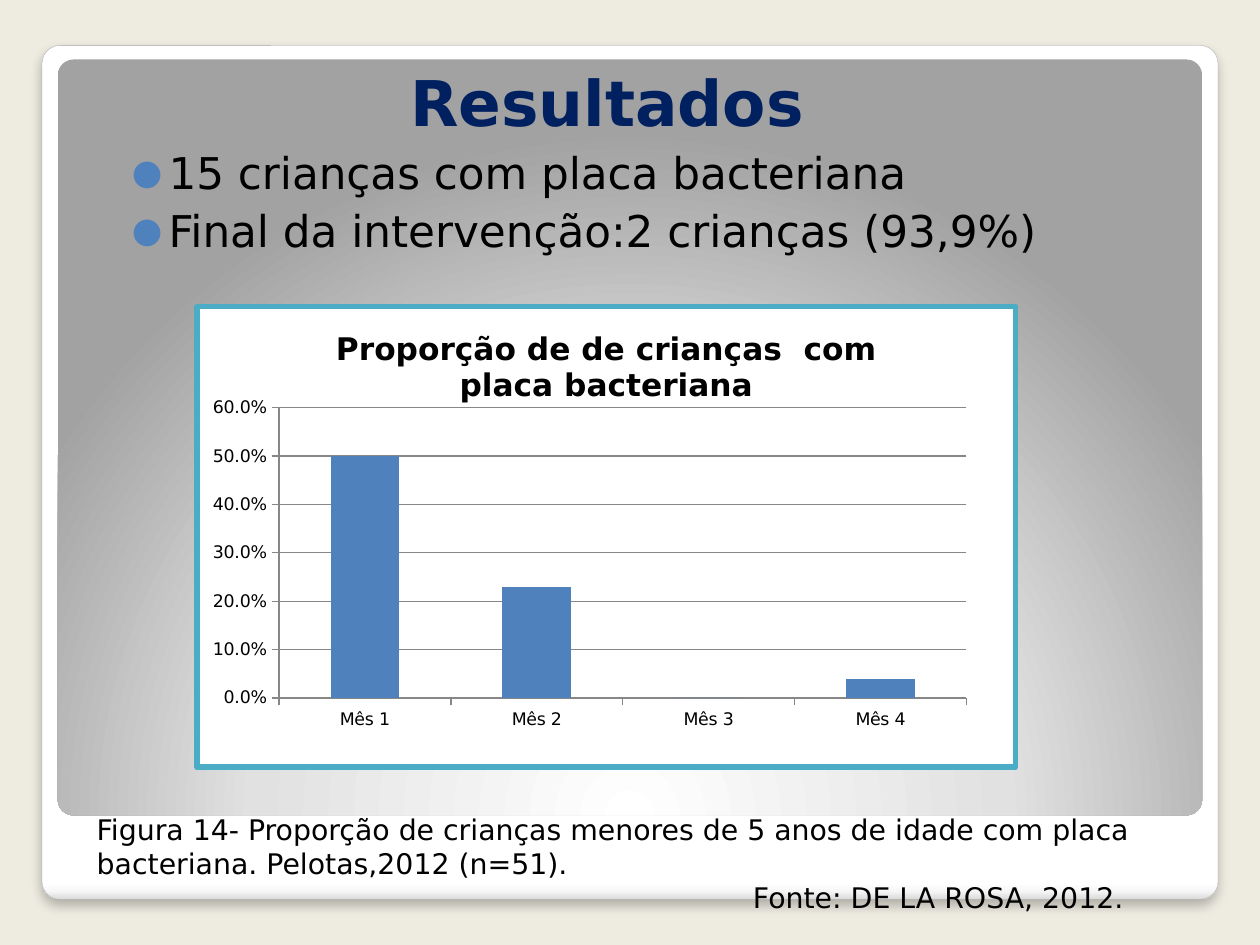
import pptx
import pptx.chart.data
import pptx.dml.color
import pptx.enum.chart
import pptx.enum.shapes
import pptx.enum.text
import pptx.oxml
import pptx.oxml.ns
import pptx.util

Pt = pptx.util.Pt
RGBColor = pptx.dml.color.RGBColor
ANCHOR = pptx.enum.text.MSO_ANCHOR

FONT = "DejaVu Sans"
BACKGROUND = RGBColor(0xEE, 0xEC, 0xE1)
FRAME_LINE = RGBColor(0xA4, 0xA4, 0xA4)
NAVY = RGBColor(0x00, 0x20, 0x60)
BLUE = RGBColor(0x4F, 0x81, 0xBD)
TEAL = RGBColor(0x4B, 0xAC, 0xC6)
GRAY = RGBColor(0x87, 0x87, 0x87)
BLACK = RGBColor(0, 0, 0)
WHITE = RGBColor(0xFF, 0xFF, 0xFF)

TITLE = "Resultados"
BULLETS = ["15 crianças com placa bacteriana",
           "Final da intervenção:2 crianças (93,9%)"]
CAPTION = ["Figura 14- Proporção de crianças menores de 5 anos de idade "
           "com placa bacteriana. Pelotas,2012 (n=51).",
           "Fonte: DE LA ROSA, 2012."]
CHART_TITLE = "Proporção de de crianças  com placa bacteriana"
MONTHS = ["Mês 1", "Mês 2", "Mês 3", "Mês 4"]
SHARES = [0.5, 0.23, 0, 0.04]
PLOT_LAYOUT = {"x": 0.1, "y": 0.22, "w": 0.84, "h": 0.63}

FRAME_STOPS = [(0, "FFFFFF"), (98, "FFFFFF"), (99, "F7F7F7"), (100, "DADADA")]
PANEL_STOPS = [(0, "FFFFFF"), (55, "E1E1E1"), (100, "A2A2A2")]
LINEAR_DOWN = '<a:lin ang="5400000" scaled="0"/>'
RADIAL_FROM_BELOW = ('<a:path path="circle"><a:fillToRect l="50000" t="175000" '
                     'r="50000" b="-75000"/></a:path>')
SOFT_SHADOW = ('<a:outerShdw blurRad="76200" dist="50800" dir="5400000" '
               'algn="tl" rotWithShape="0"><a:srgbClr val="000000">'
               '<a:alpha val="25000"/></a:srgbClr></a:outerShdw>')


def element(tag, content="", attributes=""):
    """Parse one namespaced XML element."""
    namespaces = pptx.oxml.ns.nsdecls("a", "c")
    return pptx.oxml.parse_xml(
        f"<{tag} {namespaces} {attributes}>{content}</{tag}>")


def add_panel(slide, box, stops, direction):
    """Add a rounded rectangle with a gradient fill."""
    shape = slide.shapes.add_shape(
        pptx.enum.shapes.MSO_SHAPE.ROUNDED_RECTANGLE, *map(Pt, box))
    shape.adjustments[0] = 0.021
    shape.shadow.inherit = False
    shape.line.fill.background()
    marks = "".join(f'<a:gs pos="{position * 1000}"><a:srgbClr val="{color}"/></a:gs>'
                    for position, color in stops)
    gradient = element("a:gradFill", f"<a:gsLst>{marks}</a:gsLst>{direction}",
                       'rotWithShape="1"')
    shape._element.spPr.find(pptx.oxml.ns.qn("a:prstGeom")).addnext(gradient)
    return shape


def add_text(slide, box, lines, size, color, anchor):
    """Add a wrapping text box and return its paragraphs."""
    frame = slide.shapes.add_textbox(*map(Pt, box)).text_frame
    frame.word_wrap = True
    frame.vertical_anchor = anchor
    frame.text = "\n".join(lines)
    for paragraph in frame.paragraphs:
        paragraph.font.name = FONT
        paragraph.font.size = Pt(size)
        paragraph.font.color.rgb = color
    return frame.paragraphs


def add_bullet(paragraph):
    """Give a paragraph a round blue bullet and a hanging indent."""
    paragraph.space_before = Pt(3)
    properties = paragraph._p.get_or_add_pPr()
    properties.set("marL", str(Pt(21)))
    properties.set("indent", str(-Pt(21)))
    properties.append(element("a:buClr", f'<a:srgbClr val="{BLUE}"/>'))
    properties.append(element("a:buSzPct", attributes='val="80000"'))
    properties.append(element("a:buFont", attributes=f'typeface="{FONT}"'))
    properties.append(element("a:buChar", attributes='char="●"'))


def add_share_chart(slide, box):
    """Add the column chart of monthly shares."""
    data = pptx.chart.data.CategoryChartData(number_format="0.0%")
    data.categories = MONTHS
    data.add_series("Series 1", SHARES)
    chart = slide.shapes.add_chart(
        pptx.enum.chart.XL_CHART_TYPE.COLUMN_CLUSTERED, *map(Pt, box), data).chart
    chart.has_legend = False
    chart.font.name = FONT
    chart.font.size = Pt(10)
    chart.font.color.rgb = BLACK

    chart.chart_title.text_frame.text = CHART_TITLE
    chart.chart_title.include_in_layout = False
    title_font = chart.chart_title.text_frame.paragraphs[0].font
    title_font.name = FONT
    title_font.size = Pt(18)
    title_font.bold = True
    title_font.color.rgb = BLACK

    plot = chart.plots[0]
    plot.vary_by_categories = False
    plot.gap_width = 150
    plot.series[0].format.fill.solid()
    plot.series[0].format.fill.fore_color.rgb = BLUE

    value_axis = chart.value_axis
    value_axis.minimum_scale, value_axis.maximum_scale = 0, 0.6
    value_axis.major_unit = 0.1
    value_axis.tick_labels.number_format = "0.0%"
    value_axis.tick_labels.number_format_is_linked = False
    value_axis.has_major_gridlines = True
    for axis in (value_axis, chart.category_axis):
        axis.major_tick_mark = pptx.enum.chart.XL_TICK_MARK.OUTSIDE
    for line in (value_axis.format.line, chart.category_axis.format.line,
                 value_axis.major_gridlines.format.line):
        line.color.rgb = GRAY
        line.width = Pt(0.75)

    qn = pptx.oxml.ns.qn
    space = chart._chartSpace
    plot_area = space.find(qn("c:chart")).find(qn("c:plotArea"))
    for layout in plot_area.findall(qn("c:layout")):
        plot_area.remove(layout)
    modes = '<c:layoutTarget val="inner"/><c:xMode val="edge"/><c:yMode val="edge"/>'
    sizes = "".join(f'<c:{key} val="{value}"/>' for key, value in PLOT_LAYOUT.items())
    plot_area.insert(0, element(
        "c:layout", f"<c:manualLayout>{modes}{sizes}</c:manualLayout>"))
    space.find(qn("c:chart")).addnext(element(
        "c:spPr",
        f'<a:solidFill><a:srgbClr val="{WHITE}"/></a:solidFill>'
        f'<a:ln w="{Pt(3.35)}"><a:solidFill><a:srgbClr val="{TEAL}"/></a:solidFill>'
        '<a:round/></a:ln>'))


presentation = pptx.Presentation()
presentation.slide_width, presentation.slide_height = Pt(720), Pt(540)
slide = presentation.slides.add_slide(presentation.slide_layouts[6])
slide.background.fill.solid()
slide.background.fill.fore_color.rgb = BACKGROUND

frame = add_panel(slide, (24, 26, 672, 488), FRAME_STOPS, LINEAR_DOWN)
frame.line.color.rgb = FRAME_LINE
frame.line.width = Pt(0.16)
frame._element.spPr.find(pptx.oxml.ns.qn("a:effectLst")).append(
    pptx.oxml.parse_xml(SOFT_SHADOW.replace(
        "<a:outerShdw", f"<a:outerShdw {pptx.oxml.ns.nsdecls('a')}", 1)))
add_panel(slide, (33, 34, 654, 432), PANEL_STOPS, RADIAL_FROM_BELOW)

caption = add_text(slide, (48.2, 474, 644.4, 52), CAPTION, 16.2, BLACK, ANCHOR.BOTTOM)
caption[1]._p.get_or_add_pPr().set("marL", str(Pt(375)))

for bullet in add_text(slide, (68.2, 80, 577, 100), BULLETS, 25, BLACK, ANCHOR.TOP):
    add_bullet(bullet)

add_share_chart(slide, (111, 173.5, 471, 266.5))

heading = add_text(slide, (24.7, 0, 644.4, 82.8), [TITLE], 36, NAVY, ANCHOR.BOTTOM)[0]
heading.font.bold = True
heading.alignment = pptx.enum.text.PP_ALIGN.CENTER

presentation.save("out.pptx")
